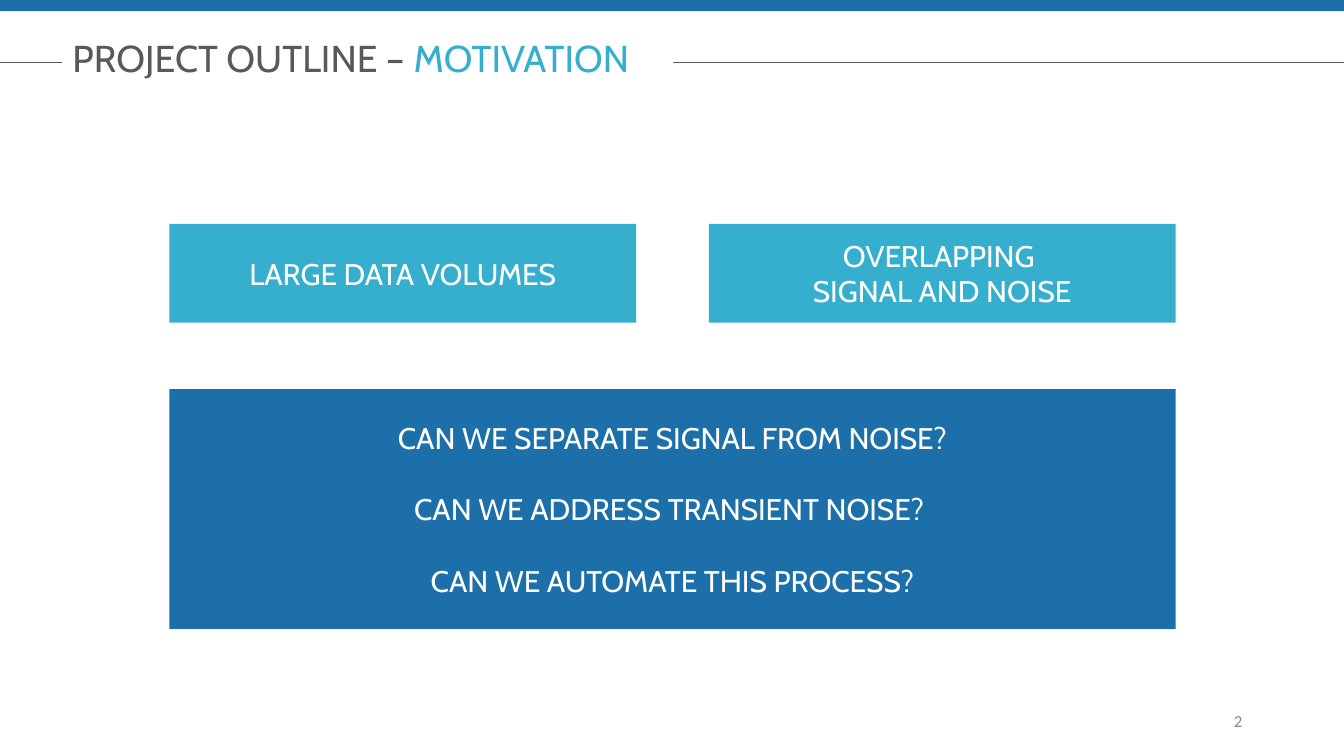
"""Build the project outline slide on motivation."""
from lxml import etree
from pptx import Presentation
from pptx.dml.color import RGBColor
from pptx.enum.shapes import MSO_CONNECTOR, MSO_SHAPE
from pptx.enum.text import MSO_ANCHOR, PP_ALIGN
from pptx.oxml.ns import qn
from pptx.util import Inches, Pt

RECT, STRAIGHT = MSO_SHAPE.RECTANGLE, MSO_CONNECTOR.STRAIGHT
MIDDLE = MSO_ANCHOR.MIDDLE
LEFT, CENTER, RIGHT = PP_ALIGN.LEFT, PP_ALIGN.CENTER, PP_ALIGN.RIGHT

TITLE = [("PROJECT OUTLINE – ", "595959"), ("MOTIVATION", "36AFCE")]
CHALLENGES = [
    ["LARGE DATA VOLUMES"],
    ["OVERLAPPING ", "SIGNAL AND NOISE"],
]
QUESTIONS = [
    "CAN WE SEPARATE SIGNAL FROM NOISE?",
    "CAN WE ADDRESS TRANSIENT NOISE? ",
    "CAN WE AUTOMATE THIS PROCESS?",
]
PAGE_NUMBER = "2"

BLUE, CYAN, GREY, WHITE = "1D6FA9", "36AFCE", "595959", "FFFFFF"
SLIDE_W, SLIDE_H = 13.33, 7.5
BODY_X, BODY_W = 1.68, 9.98
CARD_W = 4.63
CARD_STEP = BODY_W - CARD_W


def rgb(color):
    return RGBColor.from_string(color)


def add_rect(s, x, y, w, h, color):
    sp = s.shapes.add_shape(RECT, Inches(x), Inches(y), Inches(w), Inches(h))
    sp.shadow.inherit = False
    sp.fill.solid()
    sp.fill.fore_color.rgb = rgb(color)
    sp.line.fill.background()
    return sp


def write(sp, paragraphs, size, align, gap=0, font="Cabin"):
    tf = sp.text_frame
    tf.word_wrap = True
    tf.vertical_anchor = MIDDLE
    for i, runs in enumerate(paragraphs):
        p = tf.add_paragraph() if i else tf.paragraphs[0]
        p.alignment = align
        p.font.size, p.font.name = Pt(size), font
        if i and gap:
            p.space_before = Pt(gap)
        for text, color in runs:
            r = p.add_run()
            r.text = text
            r.font.color.rgb = rgb(color)


def main():
    prs = Presentation()
    prs.slide_width, prs.slide_height = Inches(SLIDE_W), Inches(SLIDE_H)
    s = prs.slides.add_slide(prs.slide_layouts[6])

    rule = s.shapes.add_connector(STRAIGHT, 0, Inches(0.62), Inches(SLIDE_W), Inches(0.62))
    rule.line.color.rgb = rgb(GREY)
    rule.line.width = Pt(0.75)
    etree.SubElement(rule._element.spPr, qn("a:effectLst"))
    add_rect(s, 0, 0, SLIDE_W, 0.11, BLUE)

    for i, lines in enumerate(CHALLENGES):
        card = add_rect(s, BODY_X + i * CARD_STEP, 2.22, CARD_W, 0.98, CYAN)
        write(card, [[(line, WHITE)] for line in lines], 21.3, CENTER)

    panel = add_rect(s, BODY_X, 3.86, BODY_W, 2.38, BLUE)
    write(panel, [[(question, WHITE)] for question in QUESTIONS], 21.3, CENTER, gap=25.6)

    write(add_rect(s, 0.62, 0.36, 6.06, 0.42, WHITE), [TITLE], 26.7, LEFT)

    number = s.shapes.add_textbox(Inches(9.42), Inches(6.95), Inches(3), Inches(0.4))
    write(number, [[(PAGE_NUMBER, "888888")]], 12, RIGHT, font="Calibri")

    prs.save("out.pptx")


if __name__ == "__main__":
    main()
